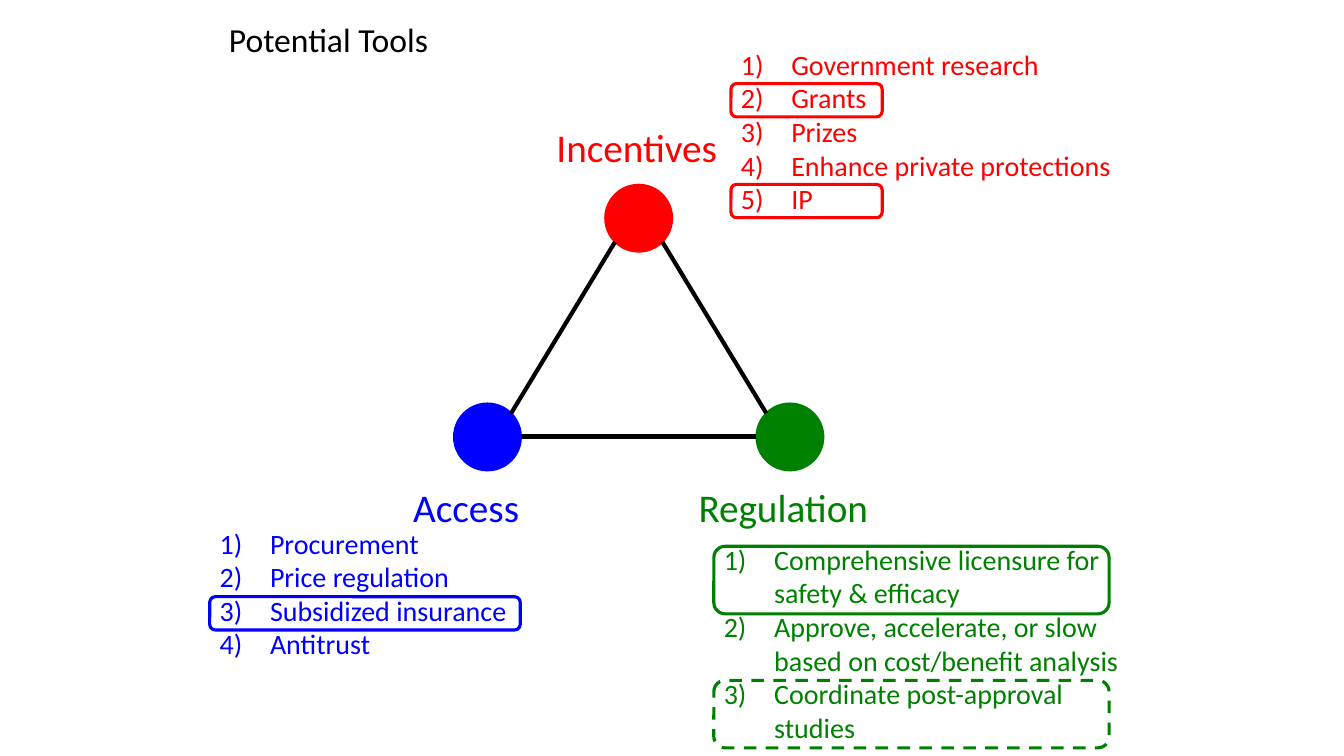
import pptx
import pptx.util
import pptx.dml.color
import pptx.enum.dml
import pptx.enum.shapes
import pptx.enum.text
from lxml import etree
from pptx.oxml.ns import qn

Inches, Pt = pptx.util.Inches, pptx.util.Pt
RGBColor = pptx.dml.color.RGBColor
Shape = pptx.enum.shapes.MSO_SHAPE

BLACK = RGBColor(0, 0, 0)
RED = RGBColor(255, 0, 0)
BLUE = RGBColor(0, 0, 255)
GREEN = RGBColor(0, 128, 0)
FONT = "Calibri"
DOT = 0.67

TITLE = "Potential Tools"
GOALS = [
    {"name": "Incentives", "color": RED, "dot": (6, 1.83),
     "label": (5.42, 1.17, 1.82, 0.57), "list": (7.25, 0.42, 4, 1.78),
     "tools": ["Government research", "Grants", "Prizes",
               "Enhance private protections", "IP"],
     "frames": [(7.25, 0.83, 1.5, 0.33, False), (7.25, 1.83, 1.5, 0.33, False)]},
    {"name": "Access", "color": BLUE, "dot": (4.5, 4),
     "label": (4, 4.75, 1.31, 0.57), "list": (2.08, 5.17, 3.83, 1.45),
     "tools": ["Procurement", "Price regulation", "Subsidized insurance",
               "Antitrust"],
     "frames": [(2.08, 5.92, 3.08, 0.33, False)]},
    {"name": "Regulation", "color": GREEN, "dot": (7.5, 4),
     "label": (6.83, 4.75, 1.93, 0.57), "list": (7.08, 5.33, 4.42, 2.12),
     "tools": ["Comprehensive licensure for safety & efficacy",
               "Approve, accelerate, or slow based on cost/benefit analysis",
               "Coordinate post-approval studies"],
     "frames": [(7.08, 5.42, 3.92, 0.67, False), (7.08, 6.75, 3.92, 0.67, True)]},
]
SIDES = [(5.07, 4.1, 6.1, 2.4), (5.17, 4.33, 7.5, 4.33), (6.57, 2.4, 7.6, 4.1)]


def style(para, size, color):
    for run in para.runs:
        run.font.name = FONT
        run.font.size = Pt(size)
        run.font.color.rgb = color


def add_text(slide, area, lines, size, color, listed=False):
    box = slide.shapes.add_textbox(*map(Inches, area))
    frame = box.text_frame
    frame.word_wrap = listed
    frame.text = "\n".join(lines)
    for para in frame.paragraphs:
        if listed:
            props = para._p.get_or_add_pPr()
            props.set("marL", str(Inches(0.5)))
            props.set("indent", str(-Inches(0.5)))
            etree.SubElement(props, qn("a:buFont"), typeface="+mj-lt")
            etree.SubElement(props, qn("a:buAutoNum"), type="arabicParenR")
        style(para, size, color)


def add_outline(slide, kind, area, color, width):
    shape = slide.shapes.add_shape(kind, *map(Inches, area))
    shape.shadow.inherit = False
    shape.fill.background()
    shape.line.color.rgb = color
    shape.line.width = Pt(width)
    return shape


def add_side(slide, ends):
    straight = pptx.enum.shapes.MSO_CONNECTOR.STRAIGHT
    side = slide.shapes.add_connector(straight, *map(Inches, ends))
    side.line.color.rgb = BLACK
    side.line.width = Pt(3)
    etree.SubElement(side._element.spPr, qn("a:effectLst"))


def main():
    """Build the slide of policy tools around a triangle of goals."""
    deck = pptx.Presentation()
    deck.slide_width, deck.slide_height = Inches(13.33), Inches(7.5)
    slide = deck.slides.add_slide(deck.slide_layouts[5])

    title = slide.shapes.title
    title.left, title.top = Inches(2.17), Inches(0)
    title.width, title.height = Inches(4.33), Inches(0.83)
    frame = title.text_frame
    frame.text = TITLE
    frame.vertical_anchor = pptx.enum.text.MSO_ANCHOR.MIDDLE
    para = frame.paragraphs[0]
    para.alignment = pptx.enum.text.PP_ALIGN.LEFT
    para.line_spacing = 0.9
    style(para, 24, BLACK)

    for goal in GOALS:
        color = goal["color"]
        dot = add_outline(slide, Shape.OVAL, (*goal["dot"], DOT, DOT), color, 1)
        dot.fill.solid()
        dot.fill.fore_color.rgb = color
        add_text(slide, goal["label"], [goal["name"]], 28, color)
        add_text(slide, goal["list"], goal["tools"], 20, color, True)
        for *area, dashed in goal["frames"]:
            box = add_outline(slide, Shape.ROUNDED_RECTANGLE, area, color, 2.25)
            if dashed:
                box.line.dash_style = pptx.enum.dml.MSO_LINE.DASH
    for ends in SIDES:
        add_side(slide, ends)

    deck.save("out.pptx")


if __name__ == "__main__":
    main()
